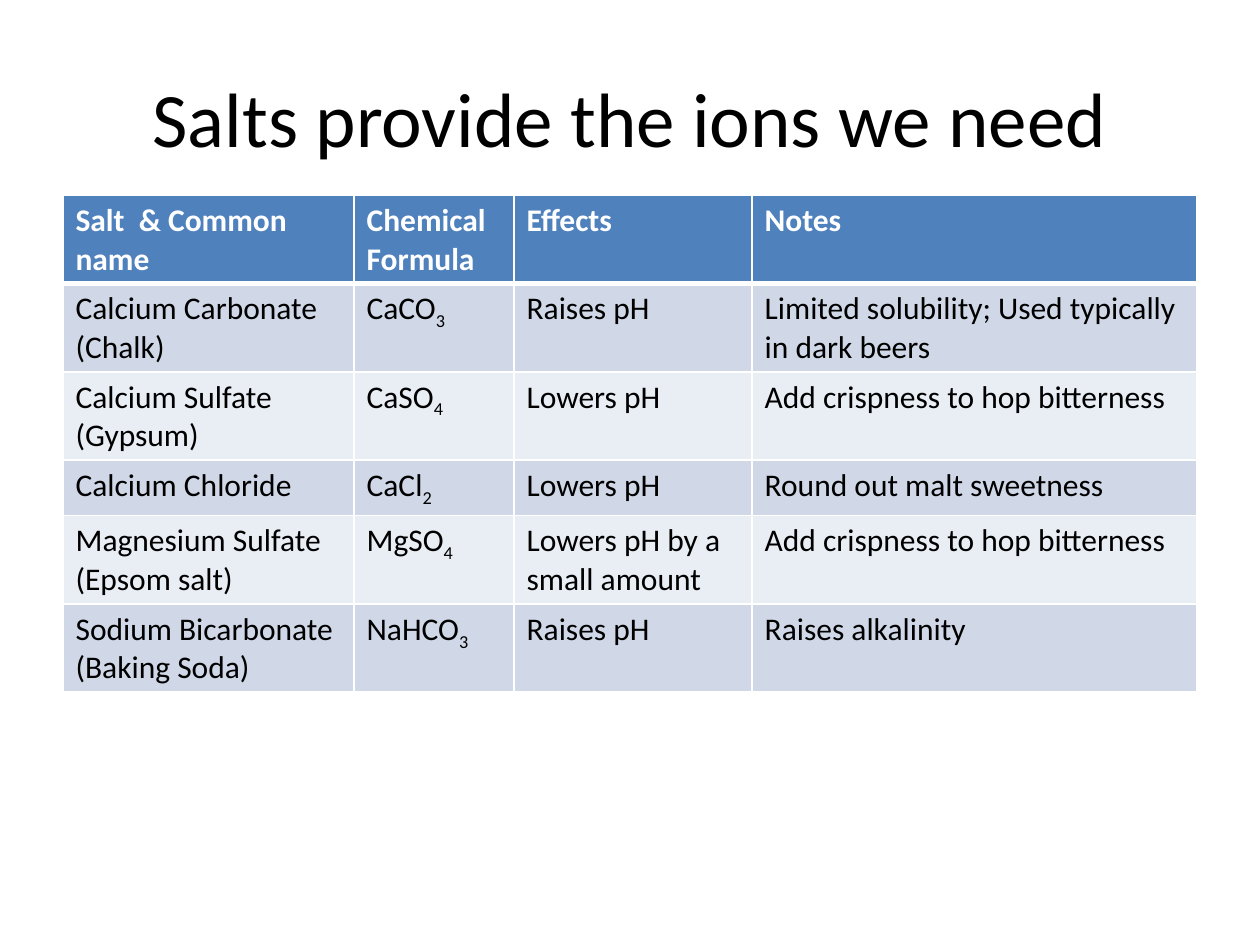
from lxml.etree import SubElement
from pptx import Presentation
from pptx.dml.color import RGBColor
from pptx.enum.text import MSO_ANCHOR, PP_ALIGN
from pptx.oxml.ns import qn
from pptx.util import Inches, Pt

HUES = {"ink": "000000", "white": "FFFFFF", "head": "4F81BD",
        "odd": "D0D8E8", "even": "E9EDF4"}
WIDE, HIGH = 10, 7.5
LEFT = 0.05 * WIDE
SPAN = 0.9 * WIDE
TOP = 1.55
COLS = [2.31, 1.27, 1.89, 3.53]
TALL, LOW = 0.7, 0.41
ROWS = [
    ("Salt  & Common name", "Chemical Formula", "Effects", "Notes"),
    ("Calcium Carbonate\n(Chalk)", "CaCO_3", "Raises pH",
     "Limited solubility; Used typically in dark beers"),
    ("Calcium Sulfate\n(Gypsum)", "CaSO_4", "Lowers pH",
     "Add crispness to hop bitterness"),
    ("Calcium Chloride", "CaCl_2", "Lowers pH", "Round out malt sweetness"),
    ("Magnesium Sulfate\n(Epsom salt)", "MgSO_4",
     "Lowers pH by a small amount", "Add crispness to hop bitterness"),
    ("Sodium Bicarbonate\n(Baking Soda)", "NaHCO_3", "Raises pH",
     "Raises alkalinity"),
]


def tint(name):
    """Return the named colour."""
    return RGBColor.from_string(HUES[name])


def write(para, text, size, hue="ink", bold=False):
    """Write text, lowering whatever follows an underscore."""
    base, _, low = text.partition("_")
    para.text = base
    if low:
        run = para.add_run()
        run.text = low
        run.font._element.set("baseline", "-25000")
    look = {"name": "Calibri", "size": Pt(size), "bold": bold}
    for run in para.runs:
        for key, value in look.items():
            setattr(run.font, key, value)
        run.font.color.rgb = tint(hue)


def edge(cell, side, width):
    """Draw a white border on one side of a cell."""
    line = SubElement(cell._tc.get_or_add_tcPr(), qn("a:ln" + side),
                      w=str(Pt(width)))
    fill = SubElement(line, qn("a:solidFill"))
    SubElement(fill, qn("a:srgbClr"), val=HUES["white"])


def add_title(slide, text):
    """Add the centred title above the table."""
    box = slide.shapes.add_textbox(Inches(LEFT), Inches(0.04 * HIGH),
                                   Inches(SPAN), Inches(1.25))
    frame = box.text_frame
    look = {"word_wrap": True, "vertical_anchor": MSO_ANCHOR.MIDDLE}
    for key, value in look.items():
        setattr(frame, key, value)
    para = frame.paragraphs[0]
    para.alignment = PP_ALIGN.CENTER
    write(para, text, 44)


def fill_cell(cell, text, row):
    """Set the borders, fill and text of a cell by its row."""
    thick = {("B", 0): 3, ("T", 1): 3}
    for side in "LRTB":
        edge(cell, side, thick.get((side, row), 1))
    head = row == 0
    cell.fill.solid()
    cell.fill.fore_color.rgb = tint(
        "head" if head else "odd" if row % 2 else "even")
    write(cell.text_frame.paragraphs[0], text, 18,
          "white" if head else "ink", head)


def add_grid(slide, rows):
    """Add the table of salts."""
    highs = [LOW if row[0] == "Calcium Chloride" else TALL for row in rows]
    grid = slide.shapes.add_table(
        len(rows), len(COLS), Inches(LEFT), Inches(TOP),
        Inches(SPAN), Inches(sum(highs))).table
    for col, width in zip(grid.columns, COLS):
        col.width = Inches(width)
    for r, (row, high) in enumerate(zip(rows, highs)):
        grid.rows[r].height = Inches(high)
        for c, text in enumerate(row):
            fill_cell(grid.cell(r, c), text, r)


def main():
    """Build and save the slide."""
    deck = Presentation()
    deck.slide_width, deck.slide_height = Inches(WIDE), Inches(HIGH)
    slide = deck.slides.add_slide(deck.slide_layouts[6])
    add_title(slide, "Salts provide the ions we need")
    add_grid(slide, ROWS)
    deck.save("out.pptx")


if __name__ == "__main__":
    main()
